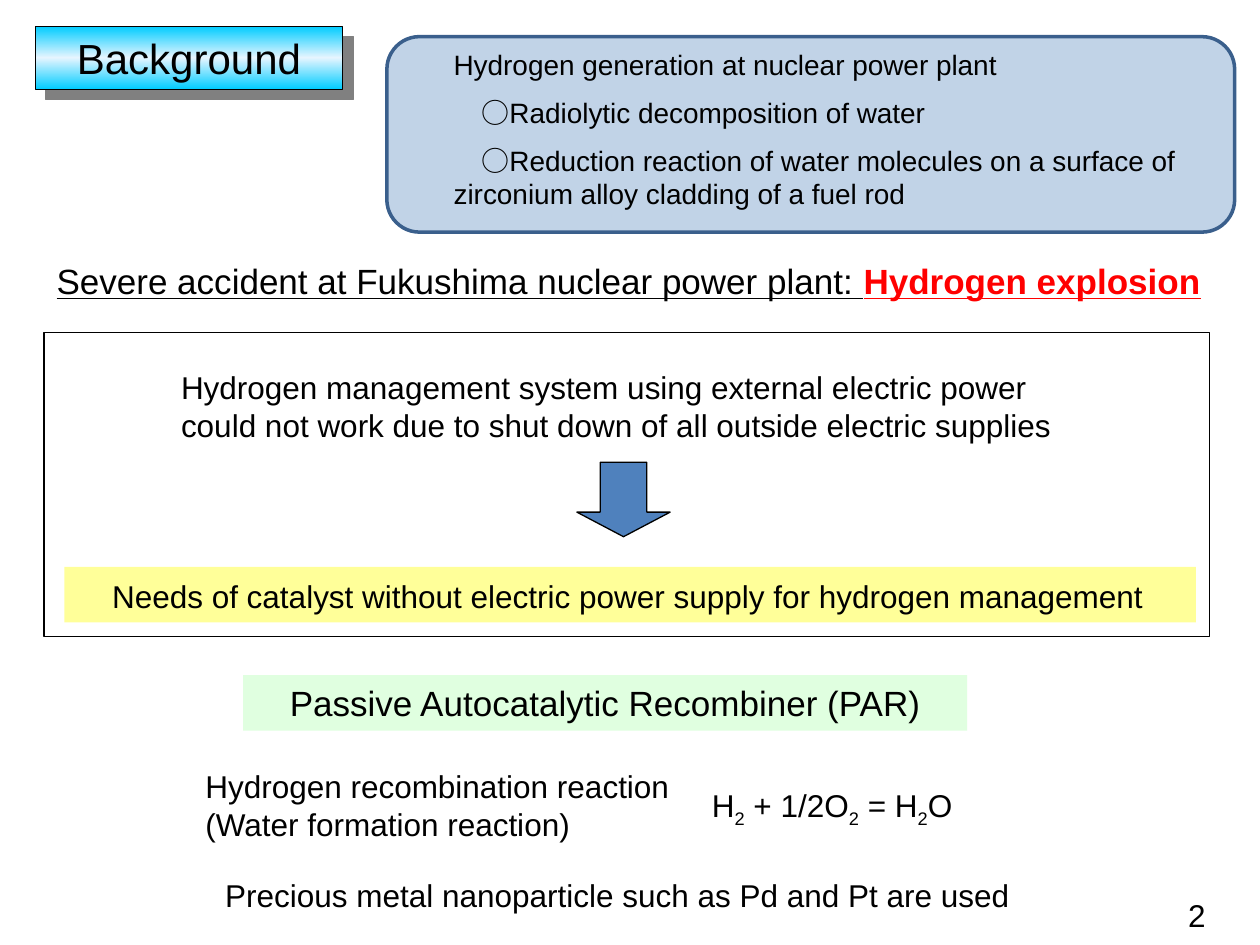
"""Build the background slide on hydrogen management and the passive recombiner."""
from lxml import etree
from pptx import Presentation
from pptx.dml.color import RGBColor
from pptx.enum.shapes import MSO_SHAPE
from pptx.enum.text import MSO_ANCHOR, MSO_AUTO_SIZE, PP_ALIGN
from pptx.oxml import parse_xml
from pptx.oxml.ns import qn
from pptx.util import Cm, Pt

RECTANGLE = MSO_SHAPE.RECTANGLE
ROUNDED = MSO_SHAPE.ROUNDED_RECTANGLE
DOWN_ARROW = MSO_SHAPE.DOWN_ARROW
TOP = MSO_ANCHOR.TOP
NO_AUTOFIT = MSO_AUTO_SIZE.NONE
LEFT, CENTER = PP_ALIGN.LEFT, PP_ALIGN.CENTER

FONT = "Arial"
NAMESPACE = "http://schemas.openxmlformats.org/drawingml/2006/main"
COLORS = {
    "black": "000000", "red": "FF0000", "blue": "4F81BD", "navy": "3A5F8C",
    "yellow": "FFFF99", "green": "CCFFCC", "cyan": "00CCFF", "ice": "E6F5FF",
    "gray": "808080",
}

TITLE = "Background"
TITLE_BOX = (0.71, 0.53, 6.2, 1.27)
TITLE_STOPS = [(0, "cyan"), (50, "ice"), (100, "cyan")]

SOURCES = [
    "Hydrogen generation at nuclear power plant",
    "\u3000○Radiolytic decomposition of water".replace("\u3000", "　"),
    "　○Reduction reaction of water molecules on a surface of zirconium alloy cladding of a fuel rod",
]
SOURCES_BOX = (8.89, 0.84, 16.2, 3.68)

PANELS = [
    (DOWN_ARROW, (11.63, 9.32, 1.88, 1.5), "blue", 100, "black", 0.75),
    (RECTANGLE, (1.3, 11.43, 22.81, 1.12), "yellow", 100, None, 0),
    (RECTANGLE, (0.89, 6.71, 23.5, 6.12), None, 100, "black", 0.75),
    (RECTANGLE, (4.9, 13.61, 14.6, 1.12), "green", 60, None, 0),
    (ROUNDED, (7.8, 0.74, 17.09, 3.94), "blue", 35, "navy", 2),
]

TEXTS = [
    ((0.89, 5.11, 23.6, 1.12), 20, LEFT, [
        ("Severe accident at Fukushima nuclear power plant: ", "underline"),
        ("Hydrogen explosion", "alert")]),
    ((23.7, 17.93, 1.4, 1.02), 18, LEFT, [("2", "plain")]),
    ((3.4, 7.29, 19.13, 1.57), 18, LEFT, [
        ("Hydrogen management system using external electric power　"
         "could not work due to shut down of all outside electric supplies", "plain")]),
    ((2.01, 11.51, 22.3, 1.02), 18, LEFT, [
        ("Needs of catalyst without electric power supply for hydrogen management", "plain")]),
    ((4.9, 13.61, 14.6, 1.12), 20, CENTER, [
        ("Passive Autocatalytic Recombiner (PAR)", "plain")]),
    ((3.89, 15.34, 10.21, 1.8), 18, LEFT, [
        ("Hydrogen recombination reaction (Water formation reaction)", "plain")]),
    ((14.1, 15.72, 9.2, 1.02), 18, LEFT, [
        ("H", "plain"), ("2", "subscript"), (" + 1/2O", "plain"), ("2", "subscript"),
        (" = H", "plain"), ("2", "subscript"), ("O", "plain")]),
    ((4.29, 17.53, 17, 1.02), 18, LEFT, [
        ("Precious metal nanoparticle such as Pd and Pt are used", "plain")]),
]


def color(name):
    return RGBColor.from_string(COLORS[name])


def place(shape, box):
    shape.left, shape.top, shape.width, shape.height = map(Cm, box)


def prepare_frame(frame):
    frame.word_wrap = True
    frame.auto_size = NO_AUTOFIT
    frame.vertical_anchor = TOP


def format_run(run, size, style="plain"):
    run.font.name = FONT
    run.font.size = Pt(size)
    run.font.color.rgb = color("red" if style == "alert" else "black")
    if style in ("underline", "alert"):
        run.font.underline = True
    if style == "alert":
        run.font.bold = True
    if style == "subscript":
        run.font._element.set("baseline", "-25000")


def add_title(slide):
    shape = slide.shapes.title
    place(shape, TITLE_BOX)
    prepare_frame(shape.text_frame)
    shape.text_frame.text = TITLE
    paragraph = shape.text_frame.paragraphs[0]
    paragraph.alignment = CENTER
    format_run(paragraph.runs[0], 24)
    stops = "".join(
        f'<a:gs pos="{position * 1000}"><a:srgbClr val="{COLORS[name]}"/></a:gs>'
        for position, name in TITLE_STOPS)
    properties = shape.element.spPr
    properties.append(parse_xml(
        f'<a:gradFill xmlns:a="{NAMESPACE}" rotWithShape="1"><a:gsLst>{stops}</a:gsLst>'
        '<a:lin ang="5400000" scaled="1"/></a:gradFill>'))
    shape.line.color.rgb = color("black")
    shape.line.width = Pt(0.75)
    properties.append(parse_xml(
        f'<a:effectLst xmlns:a="{NAMESPACE}">'
        f'<a:outerShdw dist="{Pt(8.5)}" dir="2700000" algn="ctr" rotWithShape="0">'
        f'<a:srgbClr val="{COLORS["gray"]}"/></a:outerShdw></a:effectLst>'))


def add_panel(slide, kind, box, fill, opacity, line, width):
    shape = slide.shapes.add_shape(kind, *map(Cm, box))
    shape.shadow.inherit = False
    if kind == DOWN_ARROW:
        shape.adjustments[1] = 0.33
    if fill:
        shape.fill.solid()
        shape.fill.fore_color.rgb = color(fill)
        if opacity < 100:
            fill_color = shape.element.spPr.find(f".//{qn('a:srgbClr')}")
            etree.SubElement(fill_color, qn("a:alpha")).set("val", str(opacity * 1000))
    else:
        shape.fill.background()
    if line:
        shape.line.color.rgb = color(line)
        shape.line.width = Pt(width)
    else:
        shape.line.fill.background()


def add_text(slide, box, size, alignment, parts):
    frame = slide.shapes.add_textbox(*map(Cm, box)).text_frame
    prepare_frame(frame)
    paragraph = frame.paragraphs[0]
    paragraph.alignment = alignment
    for text, style in parts:
        run = paragraph.add_run()
        run.text = text
        format_run(run, size, style)


def add_sources(slide):
    shape = slide.placeholders[1]
    place(shape, SOURCES_BOX)
    frame = shape.text_frame
    prepare_frame(frame)
    frame.text = "\n".join(SOURCES)
    for index, paragraph in enumerate(frame.paragraphs):
        paragraph.space_before = Pt(8 if index else 0)
        properties = paragraph._p.get_or_add_pPr()
        properties.set("marL", "0")
        properties.set("indent", "0")
        etree.SubElement(properties, qn("a:buNone"))
        format_run(paragraph.runs[0], 16)
    shape.element.getparent().append(shape.element)


def main():
    presentation = Presentation()
    presentation.slide_width, presentation.slide_height = Cm(25.4), Cm(19.05)
    slide = presentation.slides.add_slide(presentation.slide_layouts[1])
    add_title(slide)
    for panel in PANELS:
        add_panel(slide, *panel)
    for text in TEXTS:
        add_text(slide, *text)
    add_sources(slide)
    presentation.save("out.pptx")


if __name__ == "__main__":
    main()
